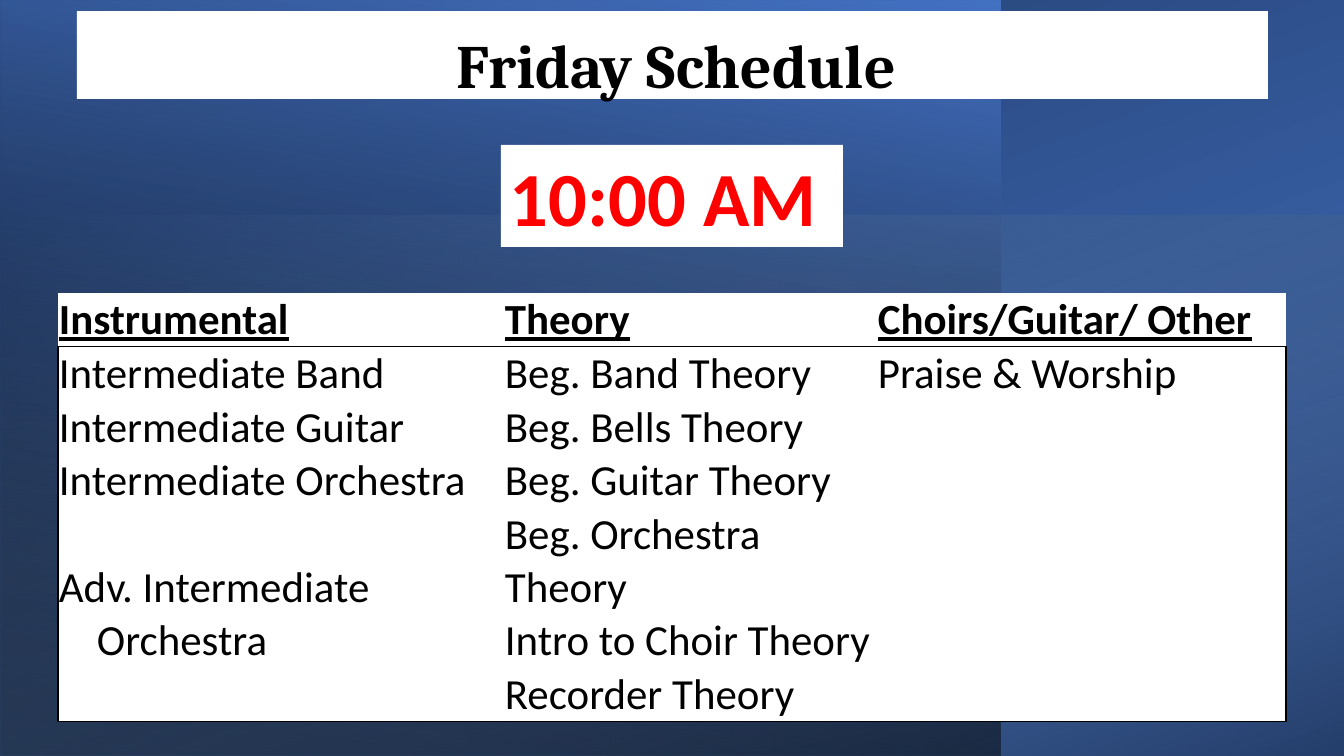
from lxml import etree
from pptx import Presentation
from pptx.dml.color import RGBColor
from pptx.enum.shapes import MSO_SHAPE
from pptx.enum.text import MSO_ANCHOR, PP_ALIGN
from pptx.oxml import parse_xml
from pptx.oxml.ns import nsdecls, qn
from pptx.util import Pt

RECT = MSO_SHAPE.RECTANGLE
TOP, BOTTOM = MSO_ANCHOR.TOP, MSO_ANCHOR.BOTTOM
LEFT, CENTER = PP_ALIGN.LEFT, PP_ALIGN.CENTER

W, H = 1344, 756
SCALE = 9144000 / W
COLORS = {
    "white": "FFFFFF",
    "black": "000000",
    "red": "FF0000",
    "blue": "4472C4",
    "navy": "1F3864",
    "sky": "9CC2E5",
}
ROWS = [
    ("Instrumental", "Theory", "Choirs/Guitar/ Other"),
    ("Intermediate Band", "Beg. Band Theory", "Praise & Worship"),
    ("Intermediate Guitar", "Beg. Bells Theory", ""),
    ("Intermediate Orchestra", "Beg. Guitar Theory", ""),
    ("Adv. Intermediate", "Beg. Orchestra Theory", ""),
    ("Orchestra", "Intro to Choir Theory", ""),
    ("", "Recorder Theory", ""),
]
COL_WIDTHS = [446, 373, 409]
LINE_HEIGHT = 52
ROW_HEIGHTS = [LINE_HEIGHT * (2 if row[0] == "Adv. Intermediate" else 1) for row in ROWS]


def px(n):
    return round(n * SCALE)


def rgb(name):
    return RGBColor.from_string(COLORS[name])


class ScheduleSlide:
    font = "Calibri"
    title_font = "Cambria"

    def __init__(self, prs):
        self.s = prs.slides.add_slide(prs.slide_layouts[5])

    def gradient(self, box, stops, angle, rotation):
        sp = self.s.shapes.add_shape(RECT, *map(px, box))
        sp.shadow.inherit = False
        sp.line.fill.background()
        sp.rotation = rotation
        sp.fill.gradient()
        spPr = sp._element.spPr
        spPr.xfrm.set("flipH", "1")
        grad = spPr.find(qn("a:gradFill"))
        stop_list = grad.find(qn("a:gsLst"))
        for old in list(stop_list):
            stop_list.remove(old)
        for position, color, opacity in stops:
            gs = etree.SubElement(stop_list, qn("a:gs"), pos=str(position * 1000))
            clr = etree.SubElement(gs, qn("a:srgbClr"), val=COLORS[color])
            if opacity < 100:
                etree.SubElement(clr, qn("a:alpha"), val=str(opacity * 1000))
        lin = grad.find(qn("a:lin"))
        lin.set("ang", str(angle * 60000))
        lin.set("scaled", "0")

    def style_text(self, tf, text, size, color="black", font=None, bold=False, underline=False):
        tf.text = text
        for r in tf.paragraphs[0].runs:
            r.font.name = font or self.font
            r.font.size = Pt(size)
            r.font.bold = bold
            r.font.underline = underline
            r.font.color.rgb = rgb(color)

    def panel(self, sp, indent=0):
        sp.fill.solid()
        sp.fill.fore_color.rgb = rgb("white")
        sp.line.fill.background()
        tf = sp.text_frame
        tf.word_wrap = True
        tf.vertical_anchor = TOP
        tf.margin_left, tf.margin_right = px(9 + indent), px(9)
        tf.margin_top = tf.margin_bottom = px(5)
        return tf

    def title(self, box, text):
        sp = self.s.shapes.title
        sp.left, sp.top, sp.width, sp.height = map(px, box)
        self.s.shapes._spTree.append(sp._element)
        tf = self.panel(sp, indent=8)
        self.style_text(tf, text, 33, font=self.title_font, bold=True)
        tf.paragraphs[0].alignment = CENTER
        tf.paragraphs[0].line_spacing = 1.15

    def time(self, box, text):
        sp = self.s.shapes.add_shape(RECT, *map(px, box))
        sp.shadow.inherit = False
        tf = self.panel(sp)
        self.style_text(tf, text, 41, "red", bold=True)
        tf.paragraphs[0].alignment = LEFT

    def borders(self, cell, sides):
        tcPr = cell._tc.get_or_add_tcPr()
        for i, side in enumerate("LRTB"):
            if side in sides:
                fill = f'<a:solidFill><a:srgbClr val="{COLORS["black"]}"/></a:solidFill>'
            else:
                fill = "<a:noFill/>"
            line = f'<a:ln{side} {nsdecls("a")} w="{Pt(0.75)}">{fill}</a:ln{side}>'
            tcPr.insert(i, parse_xml(line))

    def table(self, left, top, widths, heights, rows):
        frame = self.s.shapes.add_table(
            len(rows), len(widths), px(left), px(top), px(sum(widths)), px(sum(heights)))
        table = frame.table
        table.first_row = table.horz_banding = False
        for column, width in zip(table.columns, widths):
            column.width = px(width)
        for i, (row, height) in enumerate(zip(rows, heights)):
            table.rows[i].height = px(height)
            for j, text in enumerate(row):
                cell = table.cell(i, j)
                cell.fill.solid()
                cell.fill.fore_color.rgb = rgb("white")
                cell.vertical_anchor = BOTTOM
                cell.margin_left = px(39 if text == "Orchestra" else 1)
                cell.margin_right = cell.margin_top = px(1)
                cell.margin_bottom = 0
                self.style_text(cell.text_frame, text, 23, bold=i == 0, underline=i == 0)
                sides = ""
                if i > 0:
                    sides += "L" if j == 0 else ""
                    sides += "R" if j == len(widths) - 1 else ""
                    sides += "T" if i == 1 else ""
                    sides += "B" if i == len(rows) - 1 else ""
                else:
                    sides = "B"
                self.borders(cell, sides)


def main():
    prs = Presentation()
    prs.slide_width, prs.slide_height = px(W), px(H)
    slide = ScheduleSlide(prs)
    slide.gradient((294, -294, H, W),
                   [(0, "blue", 100), (8, "blue", 100), (100, "navy", 100)], 200, 270)
    slide.gradient((0, 0, 1000, H),
                   [(0, "black", 52), (8, "black", 52), (100, "blue", 100)], 80, 180)
    slide.gradient((402, -186, 540, W),
                   [(0, "sky", 0), (100, "black", 46)], 20, 270)
    slide.title((77, 11, 1191, 88), "Friday Schedule")
    slide.time((501, 145, 342, 102), "10:00 AM")
    slide.table(58, 293, COL_WIDTHS, ROW_HEIGHTS, ROWS)
    prs.save("out.pptx")


if __name__ == "__main__":
    main()
